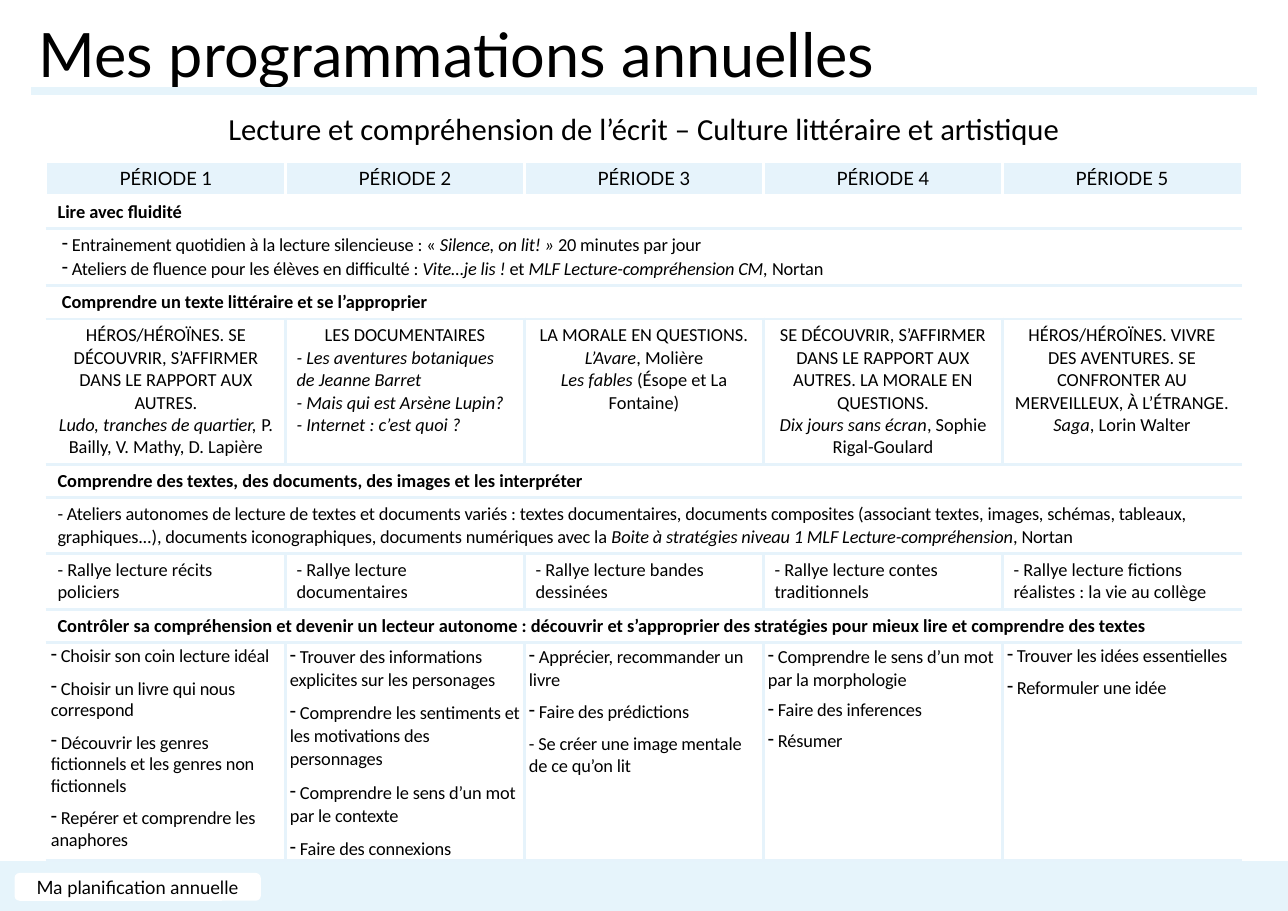
from lxml import etree
from pptx import Presentation
from pptx import util as u
from pptx.dml.color import RGBColor
from pptx.enum import shapes, text
from pptx.oxml import ns

Pt = u.Pt
SKY = RGBColor(0xE6, 0xF4, 0xFB)
GRID = RGBColor(0xE6, 0xF3, 0xFB)
WHITE = RGBColor(0xFF, 0xFF, 0xFF)
BLACK = RGBColor(0, 0, 0)
LEFT, CENTER = text.PP_ALIGN.LEFT, text.PP_ALIGN.CENTER

# style: alignment, size, font, bold, left margin, indent, bullet, letter spacing
STYLES = {
    "domain": (CENTER, 20, "Calibri", False, 0, 0, False, 0),
    "period": (CENTER, 12, "Lato", False, 0, 0, False, 0),
    "skill": (LEFT, 12, "Calibri", True, 0, 0, False, 0),
    "inset skill": (LEFT, 12, "Calibri", True, 2.9, 0, False, 0),
    "theme": (CENTER, 12, "Calibri", False, 0, 0, False, 0),
    "plain": (LEFT, 12, "Calibri", False, 0, 0, False, 0),
    "tight": (LEFT, 12, "Calibri", False, 0, 0, False, -10),
    "hang": (LEFT, 12, "Calibri", False, 9.4, -6.5, True, -10),
    "flush": (LEFT, 12, "Calibri", False, 2.9, 0, True, -10),
    "typed": (LEFT, 12, "Calibri", False, 2.9, 0, False, -10),
}

ROWS = [
    (36.4, [[("domain", "Lecture et compréhension de l’écrit – Culture littéraire et artistique")]]),
    (22, [[("period", f"PÉRIODE {number}")] for number in range(1, 6)]),
    (21.6, [[("skill", "Lire avec fluidité")]]),
    (36.9, [[
        ("hang", "Entrainement quotidien à la lecture silencieuse : « *Silence, on lit! » *20 minutes par jour", 1.6),
        ("hang", "Ateliers de fluence pour les élèves en difficulté : *Vite…je lis ! *et "
                 "*MLF Lecture-compréhension CM, *Nortan", 0.8)]]),
    (21.6, [[("inset skill", "Comprendre un texte littéraire et se l’approprier", 0.8)]]),
    (93.4, [
        [("theme", "HÉROS/HÉROÏNES. SE DÉCOUVRIR, S’AFFIRMER DANS LE RAPPORT AUX AUTRES."),
         ("theme", "*Ludo, tranches de quartier, *P. Bailly, V. Mathy, D. Lapière")],
        [("theme", "LES DOCUMENTAIRES"),
         ("plain", "*- Les aventures botaniques de Jeanne Barret"),
         ("plain", "*- Mais qui est Arsène Lupin?"),
         ("plain", "*- Internet : c’est quoi ?")],
        [("theme", "LA MORALE EN QUESTIONS."),
         ("theme", "*L’Avare*, Molière"),
         ("theme", "*Les fables *(Ésope et La Fontaine)")],
        [("theme", "SE DÉCOUVRIR, S’AFFIRMER DANS LE RAPPORT AUX AUTRES. LA MORALE EN QUESTIONS."),
         ("theme", "*Dix jours sans écran*, Sophie Rigal-Goulard")],
        [("theme", "HÉROS/HÉROÏNES. VIVRE DES AVENTURES. SE CONFRONTER AU MERVEILLEUX, À L’ÉTRANGE."),
         ("theme", "*Saga*, Lorin Walter")]]),
    (21.6, [[("skill", "Comprendre des textes, des documents, des images et les interpréter")]]),
    (36, [[("tight", "- Ateliers autonomes de lecture de textes et documents variés : textes documentaires, "
                     "documents composites (associant textes, images, schémas, tableaux, graphiques...), "
                     "documents iconographiques, documents numériques avec la "
                     "*Boite à stratégies niveau 1 MLF Lecture-compréhension*, Nortan")]]),
    (36, [[("plain", f"- Rallye lecture {genre}")] for genre in (
        "récits policiers", "documentaires", "bandes dessinées", "contes traditionnels",
        "fictions réalistes : la vie au collège")]),
    (21.6, [[("skill", "Contrôler sa compréhension et devenir un lecteur autonome : découvrir et s’approprier "
                       "des stratégies pour mieux lire et comprendre des textes")]]),
    (140.8, [
        [("hang", "Choisir son coin lecture idéal", 1.6),
         ("flush", " Choisir un livre qui nous correspond", 6.8, 0.97),
         ("flush", " Découvrir les genres fictionnels et les genres non fictionnels", 6.8, 0.97),
         ("flush", " Repérer et comprendre les anaphores", 6.8, 0.97)],
        [("flush", " Trouver des informations explicites sur les personages", 1.2, 1.03),
         ("flush", " Comprendre les sentiments et les motivations des personnages", 6.8, 1.03),
         ("flush", " Comprendre le sens d’un mot par le contexte", 6.8, 1.03),
         ("flush", " Faire des connexions", 6.8, 1.03)],
        [("flush", " Apprécier, recommander un livre", 5.3, 1.03),
         ("hang", "Faire des prédictions", 6.4),
         ("typed", "- Se créer une image mentale de ce qu’on lit", 6.4)],
        [("flush", " Comprendre le sens d’un mot par la morphologie", 1.2, 1.03),
         ("hang", "Faire des inferences", 5.5),
         ("hang", "Résumer", 5.5)],
        [("hang", "Trouver les idées essentielles", 1.6),
         ("hang", "Reformuler une idée", 6.5)]]),
]


def draw_edge(cell, side, color, width):
    edge = etree.SubElement(cell._tc.get_or_add_tcPr(), ns.qn(f"a:ln{side}"), w=str(Pt(width)))
    paint = etree.SubElement(edge, ns.qn("a:solidFill"))
    etree.SubElement(paint, ns.qn("a:srgbClr"), val=str(color))


def write_paragraph(paragraph, style, words, before=0, spacing=1.0):
    align, size, font, bold, margin, indent, bullet, tracking = STYLES[style]
    paragraph.alignment = align
    paragraph.space_before = Pt(before)
    paragraph.line_spacing = spacing
    properties = paragraph._p.get_or_add_pPr()
    properties.set("marL", str(Pt(margin)))
    properties.set("indent", str(Pt(indent)))
    if bullet:
        etree.SubElement(properties, ns.qn("a:buChar"), char="-")
    for index, part in enumerate(words.split("*")):
        if part:
            run = paragraph.add_run()
            run.text = part
            run.font.size, run.font.name = Pt(size), font
            run.font.bold, run.font.italic = bold, index % 2 == 1
            run.font.color.rgb = BLACK
            run._r.get_or_add_rPr().set("spc", str(tracking))


prs = Presentation()
prs.slide_width, prs.slide_height = Pt(841.7), Pt(595.4)
slide = prs.slides.add_slide(prs.slide_layouts[5])

heading = slide.shapes.title
heading.left, heading.top, heading.width, heading.height = Pt(18), Pt(7.2), Pt(616.3), Pt(55.4)
heading.text_frame.text = "Mes programmations annuelles"
heading.text_frame.vertical_anchor = text.MSO_ANCHOR.TOP
heading.text_frame.auto_size = text.MSO_AUTO_SIZE.NONE
heading_line = heading.text_frame.paragraphs[0]
heading_line.alignment = LEFT
heading_line.runs[0].font.size = Pt(40)
heading_line.runs[0].font.name = "Lato"
heading_line.runs[0].font.color.rgb = BLACK

footer = slide.shapes.add_shape(shapes.MSO_SHAPE.RECTANGLE, 0, Pt(563), Pt(841.7), Pt(32))
footer.shadow.inherit = False
footer.fill.solid()
footer.fill.fore_color.rgb = SKY
footer.line.color.rgb = SKY
footer.line.width = Pt(1)

underline = slide.shapes.add_connector(shapes.MSO_CONNECTOR.STRAIGHT, Pt(821.5), Pt(59.5), Pt(20.2), Pt(59.5))
underline.line.color.rgb = SKY
underline.line.width = Pt(4.75)
etree.SubElement(underline._element.spPr, ns.qn("a:effectLst"))

plan = slide.shapes.add_table(len(ROWS), 5, Pt(30.4), Pt(69.1), Pt(781), Pt(488)).table
plan.first_row = plan.horz_banding = False
for column in plan.columns:
    column.width = Pt(156.2)

levels = [(WHITE, 1), (WHITE, 3), (WHITE, 1)] + [(GRID, 2.25)] * (len(ROWS) - 2)
for row, (height, entries) in enumerate(ROWS):
    plan.rows[row].height = Pt(height)
    divider = (WHITE if row == 1 else GRID, 2.25)
    if len(entries) == 1:
        plan.cell(row, 0).merge(plan.cell(row, 4))
    for col in range(5):
        cell = plan.cell(row, col)
        for side, outer in (("L", col == 0), ("R", col == 4)):
            if outer or len(entries) == 1:
                draw_edge(cell, side, WHITE, 1)
            else:
                draw_edge(cell, side, *divider)
        draw_edge(cell, "T", *levels[row])
        draw_edge(cell, "B", *levels[row + 1])
        if row == 1:
            cell.fill.solid()
            cell.fill.fore_color.rgb = GRID
        else:
            cell.fill.background()
        if row == len(ROWS) - 1:
            cell.margin_left = cell.margin_right = cell.margin_bottom = 0
            cell.margin_top = Pt(1.4)
        if col < len(entries):
            for index, entry in enumerate(entries[col]):
                frame = cell.text_frame
                write_paragraph(frame.add_paragraph() if index else frame.paragraphs[0], *entry)

label = slide.shapes.add_shape(shapes.MSO_SHAPE.ROUNDED_RECTANGLE, Pt(10), Pt(571), Pt(160), Pt(17.2))
label.shadow.inherit = False
label.fill.solid()
label.fill.fore_color.rgb = WHITE
label.line.color.rgb = WHITE
label.line.width = Pt(1)
label.text_frame.margin_top = label.text_frame.margin_bottom = 0
label.text_frame.vertical_anchor = text.MSO_ANCHOR.MIDDLE
write_paragraph(label.text_frame.paragraphs[0], "period", "Ma planification annuelle")

prs.save("out.pptx")
